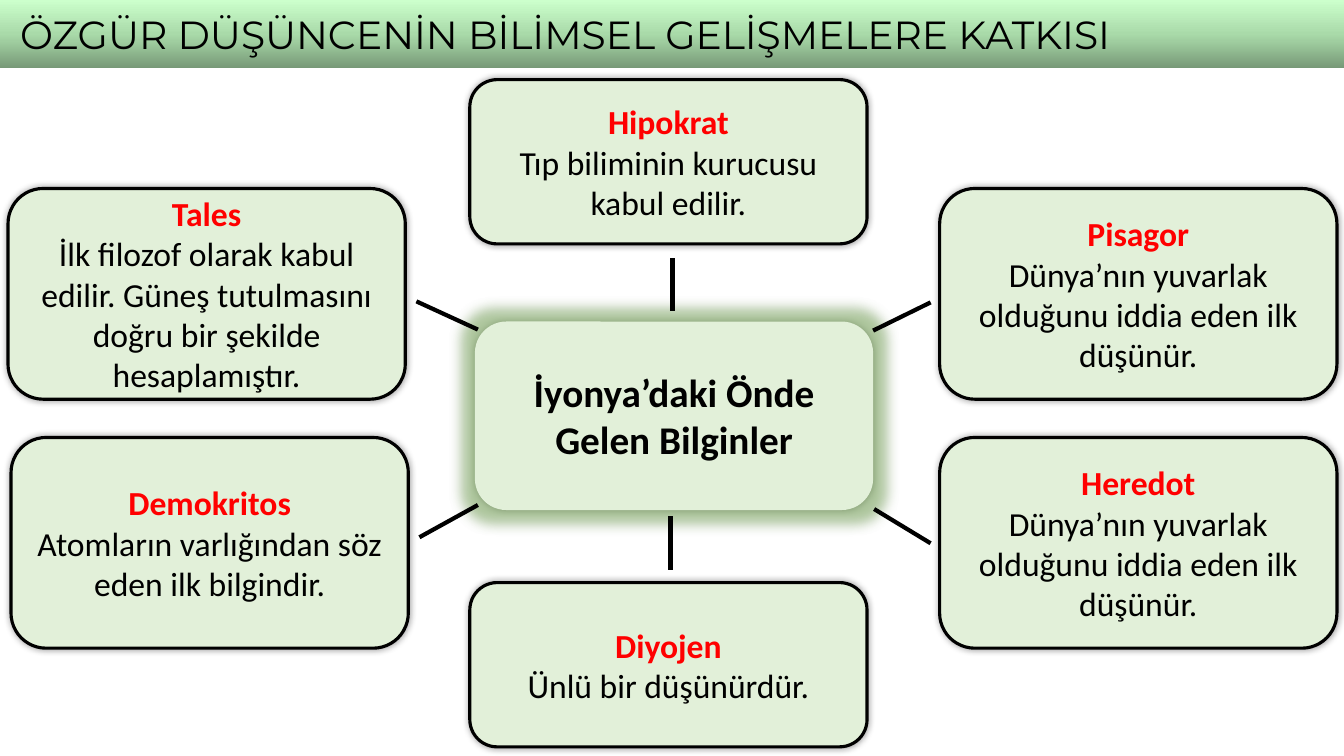
from lxml.etree import SubElement
from pptx import Presentation
from pptx.dml.color import RGBColor
from pptx.enum.shapes import MSO_CONNECTOR, MSO_SHAPE
from pptx.enum.text import MSO_ANCHOR, PP_ALIGN
from pptx.oxml.ns import qn
from pptx.util import Inches, Pt

BLACK = RGBColor(0x00, 0x00, 0x00)
RED = RGBColor(0xFF, 0x00, 0x00)
PALE_GREEN = RGBColor(0xE2, 0xF0, 0xD9)
GLOW_GREEN = RGBColor(0x70, 0xAD, 0x47)
BANNER_STOPS = [
    (0, RGBColor(0x77, 0x99, 0x77)),
    (50, RGBColor(0xA9, 0xDA, 0xA9)),
    (100, RGBColor(0xCC, 0xFF, 0xCC)),
]

CARD_WIDTH = 3.94
SIDE_HEIGHT, MIDDLE_HEIGHT = 2.09, 1.63
RIGHT_X, MIDDLE_X = 9.32, 4.66
UPPER_Y, LOWER_Y = 1.87, 4.34

SCHOLARS = [
    ("Tales", "İlk filozof olarak kabul edilir. Güneş tutulmasını doğru bir "
     "şekilde hesaplamıştır.", 0.08, UPPER_Y, SIDE_HEIGHT),
    ("Pisagor", "Dünya’nın yuvarlak olduğunu iddia eden ilk düşünür.",
     RIGHT_X, UPPER_Y, SIDE_HEIGHT),
    ("Demokritos", "Atomların varlığından söz eden ilk bilgindir.",
     0.11, LOWER_Y, SIDE_HEIGHT),
    ("Heredot", "Dünya’nın yuvarlak olduğunu iddia eden ilk düşünür.",
     RIGHT_X, LOWER_Y, SIDE_HEIGHT),
    ("Hipokrat", "Tıp biliminin kurucusu kabul edilir.",
     MIDDLE_X, 0.79, MIDDLE_HEIGHT),
    ("Diyojen", "Ünlü bir düşünürdür.", MIDDLE_X, 5.78, MIDDLE_HEIGHT),
]

SPOKES = [
    (4.13, 2.99, 4.74, 3.27),
    (8.66, 3.28, 9.23, 3.00),
    (4.16, 5.33, 4.74, 5.01),
    (8.67, 5.05, 9.23, 5.39),
    (6.67, 2.56, 6.67, 3.09),
    (6.65, 5.12, 6.65, 5.65),
]


def add_text(paragraph, text, size=24, font="Calibri", color=BLACK, bold=False):
    run = paragraph.add_run()
    run.text = text
    run.font.size = Pt(size)
    run.font.name = font
    run.font.color.rgb = color
    run.font.bold = bold


def add_panel(slide, kind, left, top, width, height, align=PP_ALIGN.CENTER):
    """Add an unlined shape and return it with its first paragraph."""
    shape = slide.shapes.add_shape(
        kind, Inches(left), Inches(top), Inches(width), Inches(height))
    shape.shadow.inherit = False
    shape.line.fill.background()
    frame = shape.text_frame
    frame.word_wrap = True
    frame.vertical_anchor = MSO_ANCHOR.MIDDLE
    paragraph = frame.paragraphs[0]
    paragraph.alignment = align
    return shape, paragraph


def add_color(parent, color, alpha=None):
    element = SubElement(parent, qn("a:srgbClr"), val=str(color))
    if alpha is not None:
        SubElement(element, qn("a:alpha"), val=str(alpha * 1000))


def add_effect(shape, tag, color, alpha, **attributes):
    effects = shape.element.spPr.find(qn("a:effectLst"))
    effect = SubElement(effects, qn(tag), attributes)
    add_color(effect, color, alpha)


def add_soft_shadow(shape):
    add_effect(shape, "a:outerShdw", BLACK, 40, blurRad=str(Pt(5)), dist="0",
               algn="ctr", rotWithShape="0")


def add_banner(slide, text):
    banner, paragraph = add_panel(
        slide, MSO_SHAPE.RECTANGLE, 0, 0, 13.33, 0.68, PP_ALIGN.LEFT)
    banner.fill.gradient()
    banner.fill.gradient_angle = 90
    stops = banner.element.spPr.find(qn("a:gradFill")).find(qn("a:gsLst"))
    for stop in list(stops):
        stops.remove(stop)
    for position, color in BANNER_STOPS:
        stop = SubElement(stops, qn("a:gs"), pos=str(position * 1000))
        add_color(stop, color)
    banner.text_frame.margin_left = Inches(0.2)
    add_text(paragraph, text, size=28, font="Montserrat")


def add_hub(slide, text):
    hub, paragraph = add_panel(
        slide, MSO_SHAPE.ROUNDED_RECTANGLE, 4.71, 3.19, 3.95, 1.87)
    hub.fill.solid()
    hub.fill.fore_color.rgb = PALE_GREEN
    add_effect(hub, "a:glow", GLOW_GREEN, 40, rad=str(Pt(18)))
    add_soft_shadow(hub)
    add_text(paragraph, text, size=28, bold=True)


def add_scholar(slide, name, description, left, top, height):
    card, paragraph = add_panel(
        slide, MSO_SHAPE.ROUNDED_RECTANGLE, left, top, CARD_WIDTH, height)
    card.fill.solid()
    card.fill.fore_color.rgb = PALE_GREEN
    card.line.color.rgb = BLACK
    card.line.width = Pt(2.25)
    add_soft_shadow(card)
    add_text(paragraph, name, color=RED, bold=True)
    paragraph.add_line_break()
    add_text(paragraph, description)


def add_spoke(slide, *ends):
    spoke = slide.shapes.add_connector(
        MSO_CONNECTOR.STRAIGHT, *[Inches(end) for end in ends])
    spoke.line.color.rgb = BLACK
    spoke.line.width = Pt(3)
    SubElement(spoke.element.spPr, qn("a:effectLst"))


def main():
    presentation = Presentation()
    presentation.slide_width = Inches(13.33)
    presentation.slide_height = Inches(7.5)
    slide = presentation.slides.add_slide(presentation.slide_layouts[6])
    add_banner(slide, "ÖZGÜR DÜŞÜNCENİN BİLİMSEL GELİŞMELERE KATKISI")
    add_hub(slide, "İyonya’daki Önde Gelen Bilginler")
    for scholar in SCHOLARS:
        add_scholar(slide, *scholar)
    for spoke in SPOKES:
        add_spoke(slide, *spoke)
    presentation.save("out.pptx")


if __name__ == "__main__":
    main()
